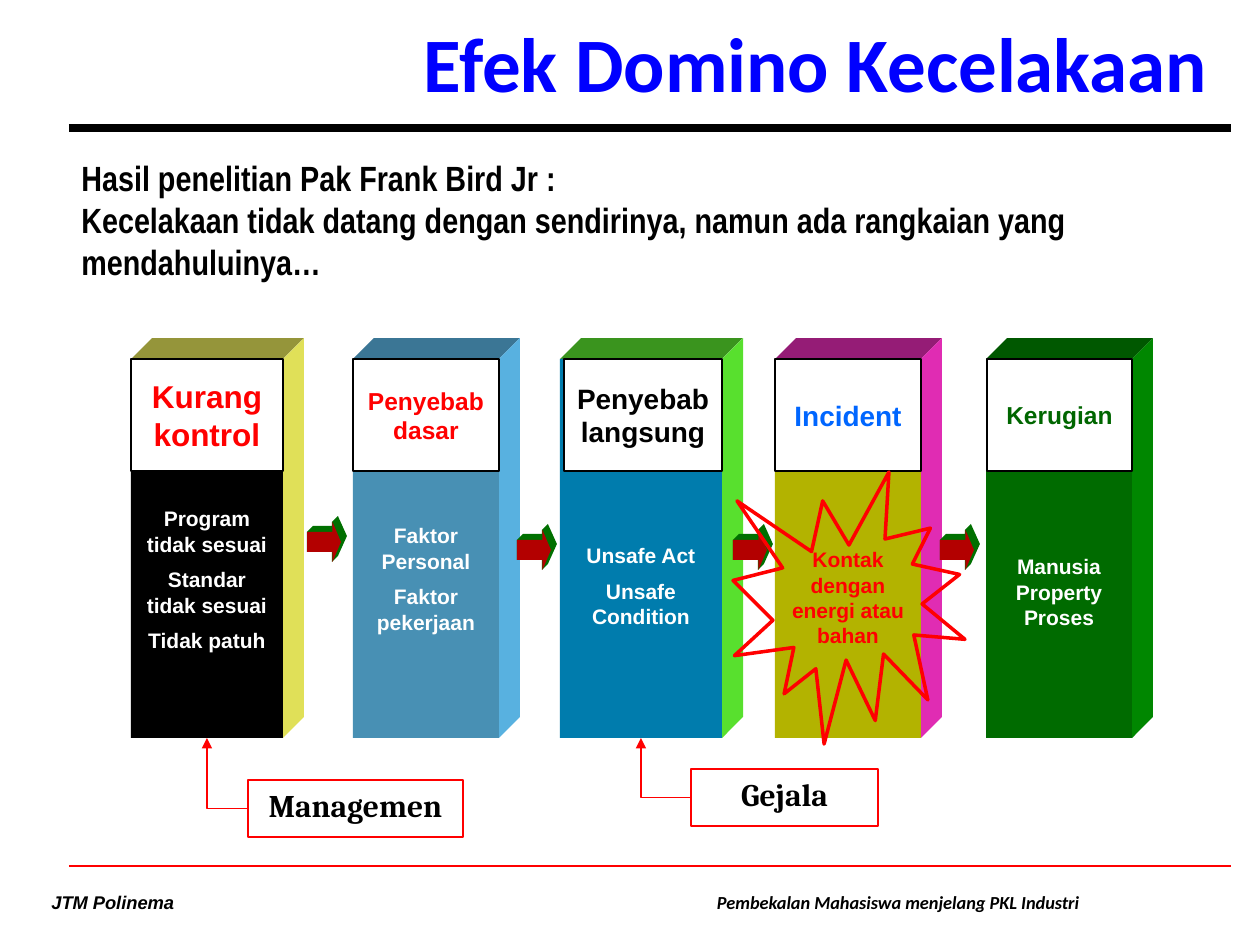
from dataclasses import dataclass

from lxml.etree import SubElement
from pptx import Presentation
from pptx.dml.color import RGBColor
from pptx.enum.shapes import MSO_CONNECTOR as Connector, MSO_SHAPE as Preset
from pptx.enum.text import MSO_ANCHOR as Anchor, PP_ALIGN as Align
from pptx.oxml.ns import qn
from pptx.util import Emu, Pt

SCALE = 914400 / 126
DEPTH = 21
FRONT_TOP, FRONT_HEIGHT, HEADING_HEIGHT = 359, 379, 112

BLACK = RGBColor(0x00, 0x00, 0x00)
WHITE = RGBColor(0xFF, 0xFF, 0xFF)
RED = RGBColor(0xFF, 0x00, 0x00)
BLUE = RGBColor(0x00, 0x00, 0xFF)
AZURE = RGBColor(0x00, 0x66, 0xFF)
FOREST = RGBColor(0x00, 0x66, 0x00)
ARROW_FRONT = RGBColor(0xB3, 0x00, 0x00)
ARROW_SIDE = RGBColor(0x00, 0x70, 0x00)


@dataclass
class Style:
    size: float
    color: RGBColor
    font: str = "Arial"
    italic: bool = False
    align: Align = Align.CENTER
    anchor: Anchor = Anchor.TOP
    wrap: bool = True
    inset_x: float = 12.6
    inset_top: float = 6.3
    gap: float = 0


@dataclass
class Heading:
    text: str
    size: int
    color: RGBColor
    left: int
    width: int


@dataclass
class Domino:
    left: int
    width: int
    front: RGBColor
    top: RGBColor
    side: RGBColor
    causes: list[str]
    inset_top: int
    heading: Heading
    ink: RGBColor = WHITE


@dataclass
class Label:
    text: str
    left: int
    top: int
    width: int
    domino: int


DOMINOES = [
    Domino(131, 152, BLACK, RGBColor(0x95, 0x95, 0x3A), RGBColor(0xE0, 0xE0, 0x58),
           ["Program tidak sesuai", "Standar tidak sesuai", "Tidak patuh"], 147,
           Heading("Kurang kontrol", 18, RED, 131, 152)),
    Domino(353, 146, RGBColor(0x48, 0x90, 0xB4), RGBColor(0x3B, 0x76, 0x95), RGBColor(0x58, 0xB1, 0xE0),
           ["Faktor Personal", "Faktor pekerjaan"], 164,
           Heading("Penyebab dasar", 14, RED, 353, 146)),
    Domino(560, 162, RGBColor(0x00, 0x7C, 0xAD), RGBColor(0x3A, 0x94, 0x1E), RGBColor(0x58, 0xE0, 0x2E),
           ["Unsafe Act", "Unsafe Condition"], 184,
           Heading("Penyebab langsung", 16, BLACK, 564, 158)),
    Domino(775, 146, RGBColor(0xB3, 0xB3, 0x00), RGBColor(0x95, 0x1C, 0x76), RGBColor(0xE0, 0x2C, 0xB3),
           ["Kontak dengan energi atau bahan"], 188,
           Heading("Incident", 16, AZURE, 775, 146), RED),
    Domino(986, 146, RGBColor(0x00, 0x6B, 0x00), RGBColor(0x00, 0x58, 0x00), RGBColor(0x00, 0x87, 0x00),
           ["Manusia Property Proses"], 195,
           Heading("Kerugian", 14, FOREST, 987, 145)),
]
ARROWS = [(307, 522), (517, 530), (733, 530), (940, 530)]
LABELS = [Label("Managemen", 248, 780, 215, 0), Label("Gejala", 691, 769, 187, 2)]


def px(value: float) -> Emu:
    return Emu(round(value * SCALE))


def write(shape, paragraphs: list[str], style: Style) -> None:
    frame = shape.text_frame
    frame_format = {
        "word_wrap": style.wrap, "vertical_anchor": style.anchor,
        "margin_left": px(style.inset_x), "margin_right": px(style.inset_x),
        "margin_top": px(style.inset_top), "margin_bottom": px(6.3),
    }
    for key, value in frame_format.items():
        setattr(frame, key, value)
    font_format = {"name": style.font, "size": Pt(style.size), "bold": True, "italic": style.italic}
    for index, text in enumerate(paragraphs):
        paragraph = frame.add_paragraph() if index else frame.paragraphs[0]
        paragraph.alignment = style.align
        if index:
            paragraph.space_before = Pt(style.gap)
        run = paragraph.add_run()
        run.text = text
        for key, value in font_format.items():
            setattr(run.font, key, value)
        run.font.color.rgb = style.color


def add_text(slide, box: tuple[int, ...], paragraphs: list[str], style: Style) -> None:
    write(slide.shapes.add_textbox(*map(px, box)), paragraphs, style)


def paint(shape, fill: RGBColor | None, line: RGBColor | None = None, width: float = 0.75):
    shape.shadow.inherit = False
    if fill is None:
        shape.fill.background()
    else:
        shape.fill.solid()
        shape.fill.fore_color.rgb = fill
    if line is None:
        shape.line.fill.background()
    else:
        shape.line.color.rgb = line
        shape.line.width = Pt(width)
    return shape


def add_preset(slide, preset: Preset, box: tuple[int, ...], fill, line=None, width: float = 0.75):
    return paint(slide.shapes.add_shape(preset, *map(px, box)), fill, line, width)


def add_outline(slide, points: list[tuple[int, int]], fill: RGBColor) -> None:
    builder = slide.shapes.build_freeform(*points[0], scale=SCALE)
    builder.add_line_segments(points[1:], close=True)
    paint(builder.convert_to_shape(), fill)


def add_line(slide, kind: Connector, ends: tuple[int, ...], color: RGBColor, width: float):
    connector = slide.shapes.add_connector(kind, *map(px, ends))
    connector.line.color.rgb = color
    connector.line.width = Pt(width)
    SubElement(connector._element.spPr, qn("a:effectLst"))
    return connector


def add_domino(slide, domino: Domino):
    left, right = domino.left, domino.left + domino.width
    top, bottom = FRONT_TOP, FRONT_TOP + FRONT_HEIGHT
    back = (right + DEPTH, top - DEPTH)
    add_outline(slide, [(left, top), (left + DEPTH, top - DEPTH), back, (right, top)], domino.top)
    add_outline(slide, [(right, top), back, (right + DEPTH, bottom - DEPTH), (right, bottom)], domino.side)
    front = add_preset(slide, Preset.RECTANGLE, (left, top, domino.width, FRONT_HEIGHT), domino.front)
    write(front, domino.causes, Style(12, domino.ink, inset_top=domino.inset_top, gap=6))
    return front


def add_heading(slide, heading: Heading) -> None:
    box = (heading.left, FRONT_TOP, heading.width, HEADING_HEIGHT)
    panel = add_preset(slide, Preset.RECTANGLE, box, WHITE, BLACK)
    write(panel, [heading.text], Style(heading.size, heading.color, anchor=Anchor.MIDDLE, inset_x=8))


def add_arrow(slide, left: int, top: int) -> None:
    silhouette = [(0, 10), (6, 4), (25, 4), (25, 0), (31, -6), (40, 14), (31, 34), (25, 40), (25, 30), (0, 30)]
    add_outline(slide, [(left + x, top + y) for x, y in silhouette], ARROW_SIDE)
    front = add_preset(slide, Preset.RIGHT_ARROW, (left, top, 34, 40), ARROW_FRONT)
    front.adjustments[0], front.adjustments[1] = 0.5, 0.25


def add_label(slide, label: Label, front) -> None:
    box = add_preset(slide, Preset.RECTANGLE, (label.left, label.top, label.width, 57), None, RED)
    write(box, [label.text], Style(18, BLACK, "Cambria"))
    ends = (label.left, label.top + 28, label.left - 45, FRONT_TOP + FRONT_HEIGHT)
    pointer = add_line(slide, Connector.ELBOW, ends, RED, 0.75)
    pointer.begin_connect(box, 1)
    pointer.end_connect(front, 2)
    pointer._element.spPr.find(qn("a:prstGeom")).set("prst", "bentConnector2")
    SubElement(pointer.line._get_or_add_ln(), qn("a:tailEnd"), type="triangle")


def main() -> None:
    deck = Presentation()
    deck.slide_width, deck.slide_height = px(1260), px(945)
    slide = deck.slides.add_slide(deck.slide_layouts[5])

    title = slide.shapes.title
    for key, value in zip(("left", "top", "width", "height"), (178, 16, 1043, 92)):
        setattr(title, key, px(value))
    write(title, ["Efek Domino Kecelakaan"],
          Style(44, BLUE, "Calibri", align=Align.RIGHT, anchor=Anchor.MIDDLE, wrap=False))

    add_line(slide, Connector.STRAIGHT, (69, 128, 1231, 128), BLACK, 4.5)
    add_line(slide, Connector.STRAIGHT, (69, 866, 1231, 866), RED, 1.5)
    add_text(slide, (698, 885, 394, 35), ["Pembekalan Mahasiswa menjelang PKL Industri"],
             Style(10.5, BLACK, "Calibri", True, Align.RIGHT, wrap=False))
    add_text(slide, (39, 885, 156, 36), ["JTM Polinema"],
             Style(10.5, BLACK, italic=True, align=Align.LEFT, wrap=False))
    add_text(slide, (69, 150, 1157, 711),
             ["Hasil penelitian Pak Frank Bird Jr :",
              "Kecelakaan tidak datang dengan sendirinya, namun ada rangkaian yang mendahuluinya…"],
             Style(20, BLACK, "Arial Narrow", align=Align.LEFT))

    fronts = [add_domino(slide, domino) for domino in DOMINOES]
    for domino in DOMINOES:
        add_heading(slide, domino.heading)
    for left, top in ARROWS:
        add_arrow(slide, left, top)
    for label in LABELS:
        add_label(slide, label, fronts[label.domino])
    add_preset(slide, Preset.EXPLOSION1, (733, 472, 232, 272), None, RED, 2)

    deck.save("out.pptx")


if __name__ == "__main__":
    main()
